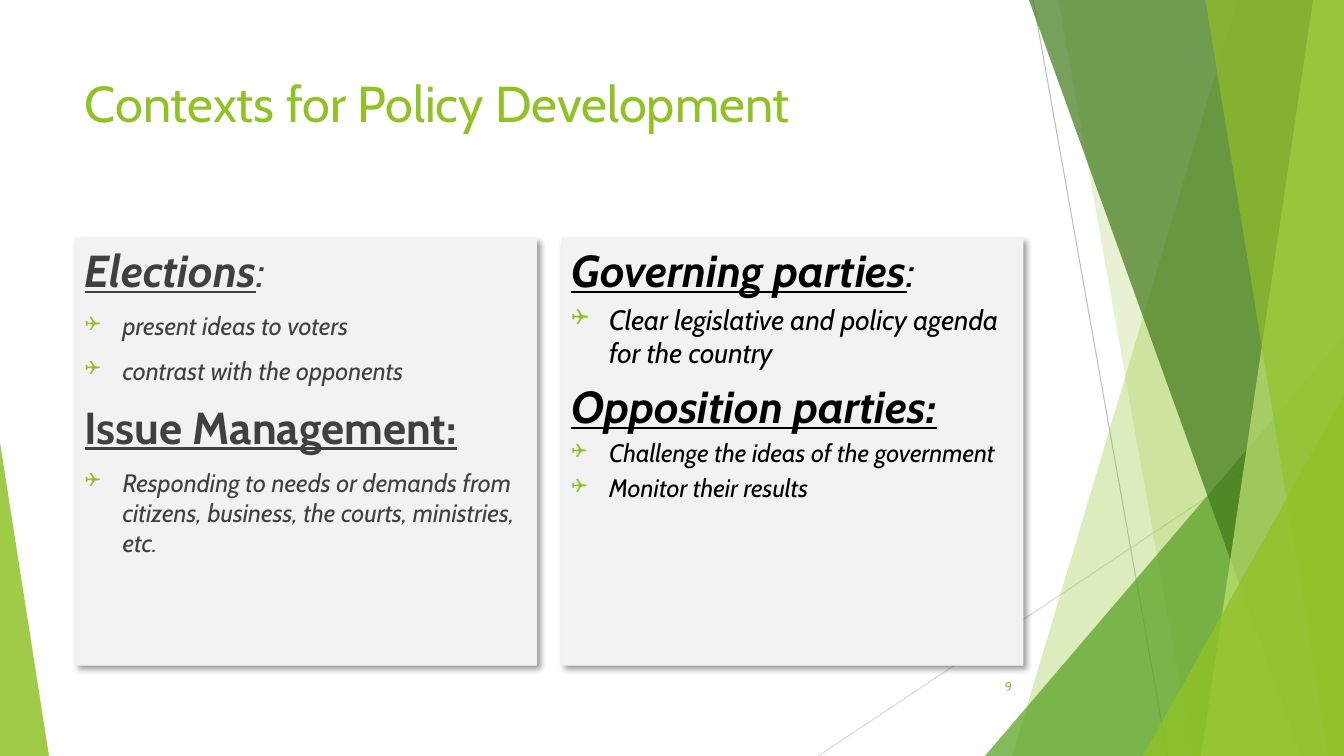
from lxml.etree import SubElement
from pptx import Presentation
from pptx.dml.color import RGBColor
from pptx.enum.shapes import MSO_CONNECTOR, MSO_SHAPE
from pptx.enum.text import MSO_ANCHOR, MSO_AUTO_SIZE, PP_ALIGN
from pptx.oxml.ns import qn
from pptx.util import Pt

LIME, GREEN, FOREST, PALE = "90C226", "54A021", "3F7819", "C0E474"
WIDTH, HEIGHT = 960, 540


def colour(hex_value):
    return RGBColor.from_string(hex_value)


def add_xml(parent, tag, **attributes):
    return SubElement(parent, qn(tag), {key: str(value) for key, value in attributes.items()})


class SlideBuilder:
    font = "Cabin"
    bullet_indent = 27

    def __init__(self, slide):
        self.slide = slide
        self.shapes = slide.shapes

    def line(self, start, end, hex_value):
        connector = self.shapes.add_connector(
            MSO_CONNECTOR.STRAIGHT, *(Pt(v) for v in (*start, *end)))
        connector.line.color.rgb = colour(hex_value)
        connector.line.width = Pt(0.75)
        add_xml(connector._element.spPr, "a:effectLst")

    def paint(self, shape, hex_value, opacity=100):
        shape.shadow.inherit = False
        shape.fill.solid()
        shape.fill.fore_color.rgb = colour(hex_value)
        shape.line.fill.background()
        if opacity < 100:
            rgb = shape._element.spPr.find(qn("a:solidFill"))[0]
            add_xml(rgb, "a:alpha", val=opacity * 1000)

    def facet(self, top_left, bottom_left, hex_value, opacity):
        outline = self.shapes.build_freeform(Pt(top_left), 0)
        corners = [(WIDTH, 0), (WIDTH, HEIGHT), (bottom_left, HEIGHT)]
        outline.add_line_segments([(Pt(x), Pt(y)) for x, y in corners], close=True)
        self.paint(outline.convert_to_shape(), hex_value, opacity)

    def corner(self, left, width, height, apex, hex_value, opacity):
        triangle = self.shapes.add_shape(
            MSO_SHAPE.ISOSCELES_TRIANGLE, Pt(left), Pt(HEIGHT - height), Pt(width), Pt(height))
        triangle.adjustments[0] = apex
        self.paint(triangle, hex_value, opacity)

    def run(self, paragraph, words, size, hex_value, bold=False, italic=False, underline=False):
        run = paragraph.add_run()
        run.text = words
        font = run.font
        font.name, font.size = self.font, Pt(size)
        font.bold, font.italic, font.underline = bold, italic, underline
        font.color.rgb = colour(hex_value)

    def frame(self, shape, anchor):
        frame = shape.text_frame
        frame.word_wrap = True
        frame.auto_size = MSO_AUTO_SIZE.NONE
        frame.vertical_anchor = anchor
        return frame

    def title(self, words, left, top, width, height):
        title = self.shapes.title
        title.left, title.top, title.width, title.height = map(Pt, (left, top, width, height))
        paragraph = self.frame(title, MSO_ANCHOR.TOP).paragraphs[0]
        paragraph.alignment = PP_ALIGN.LEFT
        self.run(paragraph, words, 36, LIME)

    def page_number(self, number, left, top, width, height):
        box = self.shapes.add_textbox(Pt(left), Pt(top), Pt(width), Pt(height))
        paragraph = self.frame(box, MSO_ANCHOR.MIDDLE).paragraphs[0]
        paragraph.alignment = PP_ALIGN.RIGHT
        self.run(paragraph, number, 9, LIME)

    def bullet(self, paragraph):
        properties = paragraph._p.get_or_add_pPr()
        properties.set("marL", str(Pt(self.bullet_indent)))
        properties.set("indent", str(-Pt(self.bullet_indent)))
        add_xml(add_xml(properties, "a:buClr"), "a:srgbClr", val=LIME)
        add_xml(properties, "a:buSzPct", val=80000)
        add_xml(properties, "a:buFont", typeface="Wingdings")
        add_xml(properties, "a:buChar", char="❑")

    def panel(self, left, topics, text_colour, gap):
        panel = self.shapes.add_shape(
            MSO_SHAPE.RECTANGLE, Pt(left), Pt(170), Pt(330), Pt(305.5))
        self.paint(panel, "F2F2F2")
        effects = panel._element.spPr.find(qn("a:effectLst"))
        shadow = add_xml(effects, "a:outerShdw", blurRad=Pt(4), dist=Pt(3),
                         dir=45 * 60000, algn="tl", rotWithShape=0)
        add_xml(add_xml(shadow, "a:srgbClr", val="000000"), "a:alpha", val=40000)

        frame = self.frame(panel, MSO_ANCHOR.TOP)
        paragraph = frame.paragraphs[0]
        for heading, colon, italic, size, points in topics:
            if paragraph.runs:
                paragraph = frame.add_paragraph()
            paragraph.alignment = PP_ALIGN.LEFT
            paragraph.space_before = Pt(gap(32))
            self.run(paragraph, heading, 32, text_colour, True, italic, True)
            if colon:
                self.run(paragraph, colon, 32, text_colour, italic=True)
            for point in points:
                paragraph = frame.add_paragraph()
                paragraph.alignment = PP_ALIGN.LEFT
                paragraph.space_before = Pt(gap(size))
                self.bullet(paragraph)
                self.run(paragraph, point, size, text_colour, italic=True)


def main():
    deck = Presentation()
    deck.slide_width, deck.slide_height = Pt(WIDTH), Pt(HEIGHT)
    builder = SlideBuilder(deck.slides.add_slide(deck.slide_layouts[5]))

    builder.line((738, 0), (834, HEIGHT), "BFBFBF")
    builder.line((WIDTH, 290), (584.5, HEIGHT), "D9D9D9")
    builder.facet(884, 723, LIME, 30)
    builder.facet(756, 852, LIME, 20)
    builder.corner(703.5, 256.5, 300, 1, GREEN, 72)
    builder.facet(735, 929.5, FOREST, 70)
    builder.facet(938, 858, PALE, 70)
    builder.facet(861, 949, LIME, 65)
    builder.corner(816.5, 143.5, 257, 1, LIME, 80)
    builder.corner(0, 35, 224, 0, LIME, 85)

    builder.title("Contexts for Policy Development", 53.5, 48, 677, 104)
    builder.page_number("9", 676, 476, 54, 29)

    party_topics = [
        ("Governing parties", ":", True, 20,
         ["Clear legislative and policy agenda for the country"]),
        ("Opposition parties:", "", True, 18,
         ["Challenge the ideas of the government", "Monitor their results"]),
    ]
    context_topics = [
        ("Elections", ":", True, 18,
         ["present ideas to voters", "contrast with the opponents"]),
        ("Issue Management:", "", False, 18,
         ["Responding to needs or demands from citizens, business, the courts, ministries, etc."]),
    ]
    builder.panel(401, party_topics, "000000", lambda size: size * 0.2)
    builder.panel(53.5, context_topics, "404040", lambda size: 10)

    deck.save("out.pptx")


if __name__ == "__main__":
    main()
